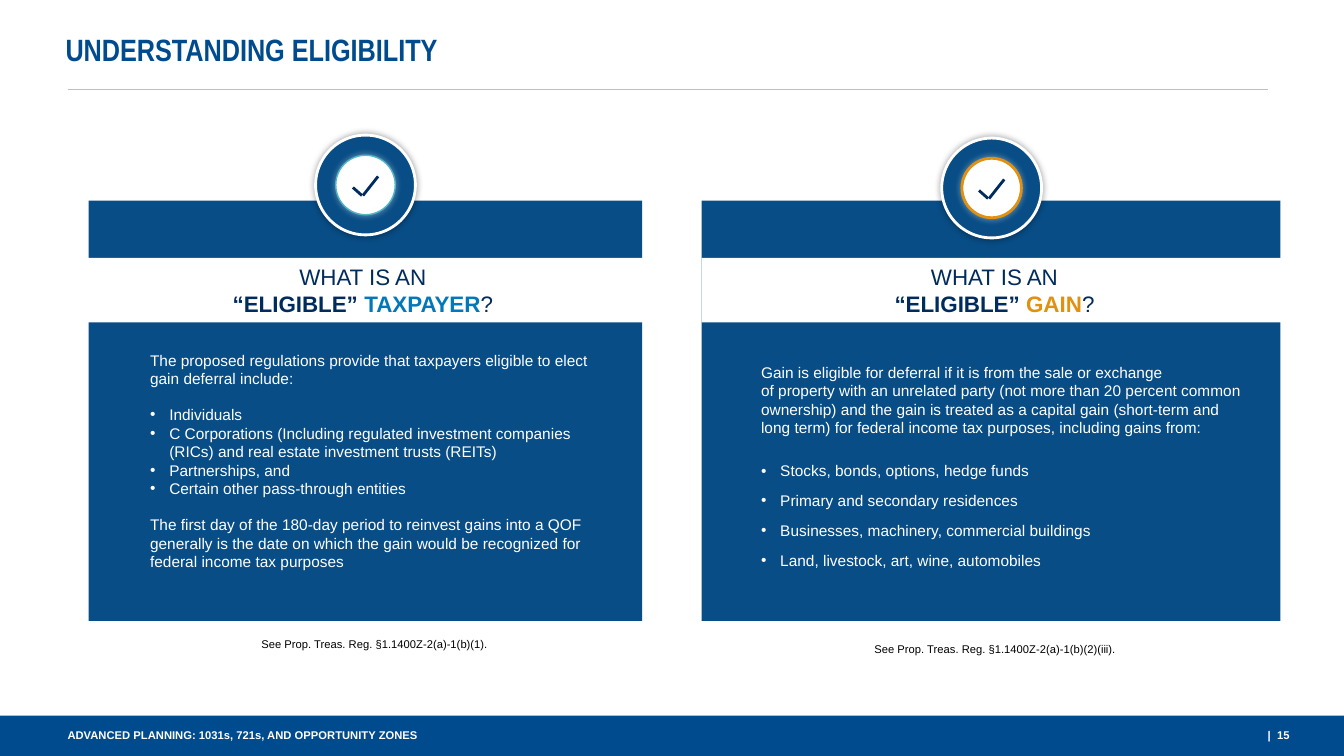
from lxml import etree
from pptx import Presentation
from pptx.dml.color import RGBColor
from pptx.enum.shapes import MSO_CONNECTOR, MSO_SHAPE
from pptx.enum.text import MSO_ANCHOR, MSO_AUTO_SIZE, PP_ALIGN
from pptx.oxml.ns import qn
from pptx.util import Inches, Pt

LEFT, CENTER, RIGHT = PP_ALIGN.LEFT, PP_ALIGN.CENTER, PP_ALIGN.RIGHT
TOP, MIDDLE = MSO_ANCHOR.TOP, MSO_ANCHOR.MIDDLE
RECTANGLE, OVAL = MSO_SHAPE.RECTANGLE, MSO_SHAPE.OVAL
STRAIGHT, NO_AUTOFIT = MSO_CONNECTOR.STRAIGHT, MSO_AUTO_SIZE.NONE

WHITE = RGBColor(0xFF, 0xFF, 0xFF)
BLACK = RGBColor(0, 0, 0)
BRAND_BLUE = RGBColor(0x00, 0x4B, 0x8D)
CARD_BLUE = RGBColor(0x08, 0x4D, 0x86)
NAVY = RGBColor(0x00, 0x2B, 0x5D)
SKY = RGBColor(0x00, 0x78, 0xB9)
TEAL = RGBColor(0x50, 0xB6, 0xC6)
ORANGE = RGBColor(0xE1, 0x90, 0x0F)
RULE_GRAY = RGBColor(0xBF, 0xBF, 0xBF)

NBSP = chr(160)
BLANK_LINE = 12.65
BULLET_INDENT = 0.19
INSETS = (0.1, 0.05, 0.1, 0.05)
NO_INSETS = (0, 0, 0, 0)

TITLE = "UNDERSTANDING ELIGIBILITY"
FOOTER = "ADVANCED PLANNING: 1031s, 721s, AND OPPORTUNITY ZONES"
PAGE_NUMBER = "|  15"

GAIN_INTRO = (
    "Gain is eligible for deferral if it is from the sale or exchange "
    f"of{NBSP}property{NBSP}with an unrelated party (not more than 20 percent common "
    f"ownership) and the gain is{NBSP}treated{NBSP}as a capital gain (short-term and "
    f"long term) for federal income tax purposes,{NBSP}including gains from:"
)

# Each paragraph is (text, bulleted, space before, space after).
CARDS = [
    {
        "panel": (0.88, 1.99, 5.49, 4.17),
        "heading": (0.85, 2.56, 5.56, 0.64),
        "subject": "TAXPAYER",
        "accent": SKY,
        "badge": (3.13, 1.34),
        "ring": (TEAL, 1),
        "texts": [
            ((1.39, 3.43, 4.62, 2.32), [
                ("The proposed regulations provide that taxpayers eligible to elect "
                 "gain deferral include:", False, 0, BLANK_LINE),
                ("Individuals", True, 0, 0),
                ("C Corporations (Including regulated investment companies (RICs) "
                 "and real estate investment trusts (REITs)", True, 0, 0),
                ("Partnerships, and", True, 0, 0),
                ("Certain other pass-through entities", True, 0, 0),
                ("The first day of the 180-day period to reinvest gains into a QOF "
                 "generally is the date on which the gain would be recognized for "
                 "federal income tax purposes", False, BLANK_LINE, 0),
            ]),
        ],
        "citation": "See Prop. Treas. Reg. §1.1400Z-2(a)-1(b)(1).",
        "citation_box": (1.97, 6.32, 3.49, 0.13),
    },
    {
        "panel": (6.96, 1.99, 5.74, 4.17),
        "heading": (6.96, 2.56, 5.87, 0.64),
        "subject": "GAIN",
        "accent": ORANGE,
        "badge": (9.34, 1.37),
        "ring": (ORANGE, 2),
        "texts": [
            ((7.45, 3.55, 5.01, 0.84), [(GAIN_INTRO, False, 0, 0)]),
            ((7.45, 4.53, 4.79, 1.18), [
                ("Stocks, bonds, options, hedge funds", True, 0, 8),
                ("Primary and secondary residences", True, 0, 8),
                ("Businesses, machinery, commercial buildings", True, 0, 8),
                ("Land, livestock, art, wine, automobiles", True, 0, 8),
            ]),
        ],
        "citation": "See Prop. Treas. Reg. §1.1400Z-2(a)-1(b)(2)(iii).",
        "citation_box": (8.44, 6.37, 2.86, 0.13),
    },
]

BADGE_SIZE, RING_SIZE = 0.99, 0.59
CHECK_STROKES = [(0.37, 0.52, 0.46, 0.6), (0.47, 0.6, 0.62, 0.41)]


def inches(values):
    return [Inches(value) for value in values]


def add_block(kind, box, fill, outline=None, glow=None):
    shape = slide.shapes.add_shape(kind, *inches(box))
    shape.fill.solid()
    shape.fill.fore_color.rgb = fill
    if outline:
        shape.line.color.rgb = outline[0]
        shape.line.width = Pt(outline[1])
    else:
        shape.line.fill.background()
    shape.shadow.inherit = False
    if glow:
        effects = shape._element.spPr.find(qn("a:effectLst"))
        shadow = etree.SubElement(effects, qn("a:outerShdw"), blurRad=str(Pt(5)),
                                  dist="0", dir="0", algn="ctr", rotWithShape="0")
        color = etree.SubElement(shadow, qn("a:srgbClr"), val=str(glow))
        etree.SubElement(color, qn("a:alpha"), val="40000")
    return shape


def add_stroke(ends, color, width):
    connector = slide.shapes.add_connector(STRAIGHT, *inches(ends))
    connector.line.color.rgb = color
    connector.line.width = Pt(width)
    etree.SubElement(connector._element.spPr, qn("a:effectLst"))


def prepare_frame(shape, insets=INSETS, anchor=TOP, wrap=True):
    frame = shape.text_frame
    frame.auto_size = NO_AUTOFIT
    frame.word_wrap = wrap
    frame.vertical_anchor = anchor
    (frame.margin_left, frame.margin_top,
     frame.margin_right, frame.margin_bottom) = inches(insets)
    return frame


def add_run(paragraph, text, size, color, bold=False, font="Arial"):
    run = paragraph.add_run()
    run.text = text
    run.font.name = font
    run.font.size = Pt(size)
    run.font.bold = bold
    run.font.color.rgb = color


def add_label(box, text, size, color, bold=False, align=LEFT, insets=INSETS):
    frame = prepare_frame(slide.shapes.add_textbox(*inches(box)), insets)
    paragraph = frame.paragraphs[0]
    paragraph.alignment = align
    add_run(paragraph, text, size, color, bold)


def add_body(box, paragraphs):
    frame = prepare_frame(slide.shapes.add_textbox(*inches(box)))
    for index, (text, bulleted, before, after) in enumerate(paragraphs):
        paragraph = frame.add_paragraph() if index else frame.paragraphs[0]
        paragraph.space_before, paragraph.space_after = Pt(before), Pt(after)
        if bulleted:
            properties = paragraph._p.get_or_add_pPr()
            properties.set("marL", str(Inches(BULLET_INDENT)))
            properties.set("indent", str(-Inches(BULLET_INDENT)))
            etree.SubElement(properties, qn("a:buFont"), typeface="Arial")
            etree.SubElement(properties, qn("a:buChar"), char="•")
        add_run(paragraph, text, 11, WHITE)


def add_heading(box, subject, accent):
    frame = prepare_frame(add_block(RECTANGLE, box, WHITE))
    question, topic = frame.paragraphs[0], frame.add_paragraph()
    question.alignment = topic.alignment = CENTER
    add_run(question, "WHAT IS AN ", 16, NAVY)
    add_run(topic, "“ELIGIBLE” ", 16, NAVY, True)
    add_run(topic, subject, 16, accent, True)
    add_run(topic, "? ", 16, NAVY)


def add_badge(left, top, ring):
    inset = (BADGE_SIZE - RING_SIZE) / 2
    add_block(OVAL, (left, top, BADGE_SIZE, BADGE_SIZE), CARD_BLUE, (WHITE, 2), BLACK)
    add_block(OVAL, (left + inset, top + inset, RING_SIZE, RING_SIZE), WHITE, ring, WHITE)
    for x1, y1, x2, y2 in CHECK_STROKES:
        add_stroke((left + x1, top + y1, left + x2, top + y2), NAVY, 2)


presentation = Presentation()
presentation.slide_width, presentation.slide_height = inches((13.33, 7.5))
slide = presentation.slides.add_slide(presentation.slide_layouts[5])

add_block(RECTANGLE, (0, 7.1, 13.33, 0.4), BRAND_BLUE)
add_stroke((0.67, 0.89, 12.58, 0.89), RULE_GRAY, 0.5)
add_label((0.67, 7.18, 8.17, 0.24), FOOTER, 8, WHITE, True, insets=(0, 0.05, 0.1, 0.05))
add_label((9.76, 7.18, 3.13, 0.24), PAGE_NUMBER, 8, WHITE, True, RIGHT)

title = slide.shapes.title
title.left, title.top, title.width, title.height = inches((0.55, 0.25, 3.93, 0.47))
title_paragraph = prepare_frame(title, anchor=MIDDLE, wrap=False).paragraphs[0]
title_paragraph.alignment = LEFT
add_run(title_paragraph, TITLE, 22, BRAND_BLUE, True, "Arial Narrow")

for card in CARDS:
    add_block(RECTANGLE, card["panel"], CARD_BLUE)
    for box, paragraphs in card["texts"]:
        add_body(box, paragraphs)
    add_heading(card["heading"], card["subject"], card["accent"])
    add_badge(*card["badge"], card["ring"])
    add_label(card["citation_box"], card["citation"], 8, BLACK, align=CENTER, insets=NO_INSETS)

presentation.save("out.pptx")
